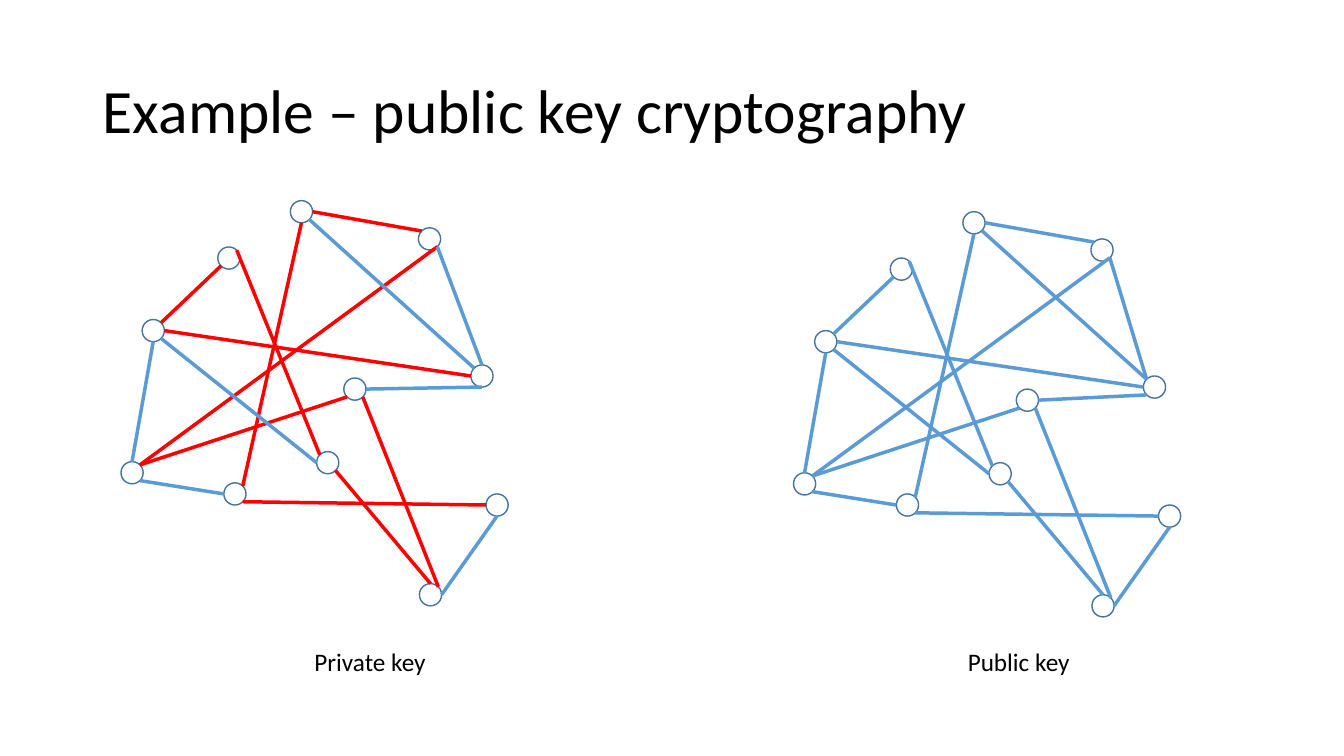
"""Build a slide comparing a private and a public key drawn as graphs."""
import math
from typing import NamedTuple

from lxml import etree
from pptx import Presentation
from pptx import util as u
from pptx.dml.color import RGBColor
from pptx.enum import shapes, text
from pptx.oxml.ns import qn
from pptx.slide import Slide
from pptx.text.text import TextFrame

BLACK = RGBColor(0x00, 0x00, 0x00)
WHITE = RGBColor(0xFF, 0xFF, 0xFF)
RED = RGBColor(0xFF, 0x00, 0x00)
BLUE = RGBColor(0x5B, 0x9B, 0xD5)
OUTLINE = RGBColor(0x43, 0x73, 0x9E)
FONT = "Calibri"
RADIUS = 0.11

ANGLES = {
    side: math.radians(45 * step)
    for step, side in enumerate(["E", "SE", "S", "SW", "W", "NW", "N", "NE"])
}


class Point(NamedTuple):
    x: float
    y: float


class Edge(NamedTuple):
    start: str
    start_side: str
    end: str
    end_side: str


class Graph(NamedTuple):
    caption: str
    caption_left: float
    caption_width: float
    offset: Point
    path_color: RGBColor
    own_edges: list[Edge]


VERTICES = {
    "A": Point(2.27, 2.56),
    "B": Point(4.93, 5.01),
    "C": Point(4.27, 5.9),
    "D": Point(4.78, 3.73),
    "E": Point(2.99, 2.1),
    "F": Point(1.52, 3.28),
    "G": Point(3.52, 3.86),
    "H": Point(2.33, 4.9),
    "I": Point(3.25, 4.59),
    "J": Point(4.26, 2.37),
    "K": Point(1.31, 4.69),
}

PATH_EDGES = [
    Edge("E", "E", "J", "NW"),
    Edge("F", "NE", "A", "SW"),
    Edge("K", "NE", "G", "SW"),
    Edge("F", "E", "D", "W"),
    Edge("I", "NW", "A", "NE"),
    Edge("H", "NE", "E", "S"),
    Edge("H", "SE", "B", "W"),
    Edge("C", "N", "I", "SE"),
    Edge("K", "NE", "J", "SE"),
    Edge("G", "SE", "C", "NE"),
]

OTHER_EDGES = [
    Edge("K", "N", "F", "S"),
    Edge("K", "SE", "H", "W"),
    Edge("F", "SE", "I", "W"),
    Edge("D", "NW", "E", "SE"),
    Edge("C", "E", "B", "S"),
]

GRAPHS = [
    Graph("Private key", 3.02, 1.32, Point(0, 0), RED,
          [Edge("D", "N", "J", "SE"), Edge("G", "E", "D", "S")]),
    Graph("Public key", 9.5, 1.22, Point(6.67, 0.11), BLUE,
          [Edge("D", "NW", "J", "SE"), Edge("G", "E", "D", "SW")]),
]


def write(frame: TextFrame, wording: str, size: int) -> None:
    """Fill a text frame with one formatted paragraph."""
    frame.text = wording
    font = frame.paragraphs[0].runs[0].font
    font.name = FONT
    font.size = u.Pt(size)
    font.color.rgb = BLACK


def add_title(slide: Slide, wording: str) -> None:
    """Place and format the title placeholder."""
    title = slide.shapes.title
    title.left, title.top = u.Inches(0.92), u.Inches(0.4)
    title.width, title.height = u.Inches(11.5), u.Inches(1.45)
    frame = title.text_frame
    write(frame, wording, 44)
    frame.auto_size = text.MSO_AUTO_SIZE.NONE
    frame.vertical_anchor = text.MSO_ANCHOR.MIDDLE
    frame.paragraphs[0].alignment = text.PP_ALIGN.LEFT
    frame.paragraphs[0].line_spacing = 0.9


def add_vertex(slide: Slide, center: Point) -> None:
    """Draw one vertex as a white circle."""
    circle = slide.shapes.add_shape(
        shapes.MSO_SHAPE.OVAL,
        u.Inches(center.x - RADIUS), u.Inches(center.y - RADIUS),
        u.Inches(2 * RADIUS), u.Inches(2 * RADIUS),
    )
    circle.shadow.inherit = False
    circle.fill.solid()
    circle.fill.fore_color.rgb = WHITE
    circle.line.color.rgb = OUTLINE
    circle.line.width = u.Pt(1)


def rim_point(center: Point, side: str) -> Point:
    """Return the point on a vertex circle at a compass side."""
    angle = ANGLES[side]
    return Point(center.x + RADIUS * math.cos(angle),
                 center.y + RADIUS * math.sin(angle))


def add_edge(slide: Slide, edge: Edge, centers: dict[str, Point],
             color: RGBColor) -> None:
    """Draw one edge between the rims of two vertices."""
    start = rim_point(centers[edge.start], edge.start_side)
    end = rim_point(centers[edge.end], edge.end_side)
    line = slide.shapes.add_connector(
        shapes.MSO_CONNECTOR.STRAIGHT,
        u.Inches(start.x), u.Inches(start.y), u.Inches(end.x), u.Inches(end.y),
    )
    line.line.color.rgb = color
    line.line.width = u.Pt(2.5)
    etree.SubElement(line._element.spPr, qn("a:effectLst"))


def add_graph(slide: Slide, graph: Graph) -> None:
    """Draw a graph with its vertices, edges and caption."""
    centers = {
        name: Point(point.x + graph.offset.x, point.y + graph.offset.y)
        for name, point in VERTICES.items()
    }
    for center in centers.values():
        add_vertex(slide, center)
    for edge in PATH_EDGES:
        add_edge(slide, edge, centers, graph.path_color)
    for edge in OTHER_EDGES + graph.own_edges:
        add_edge(slide, edge, centers, BLUE)
    caption = slide.shapes.add_textbox(
        u.Inches(graph.caption_left), u.Inches(6.36),
        u.Inches(graph.caption_width), u.Inches(0.4),
    )
    write(caption.text_frame, graph.caption, 18)
    caption.text_frame.word_wrap = False
    caption.text_frame.auto_size = text.MSO_AUTO_SIZE.SHAPE_TO_FIT_TEXT


def main() -> None:
    """Create and save the presentation."""
    presentation = Presentation()
    presentation.slide_width = u.Inches(13.33)
    presentation.slide_height = u.Inches(7.5)
    slide = presentation.slides.add_slide(presentation.slide_layouts[5])
    add_title(slide, "Example – public key cryptography")
    for graph in GRAPHS:
        add_graph(slide, graph)
    presentation.save("out.pptx")


if __name__ == "__main__":
    main()
